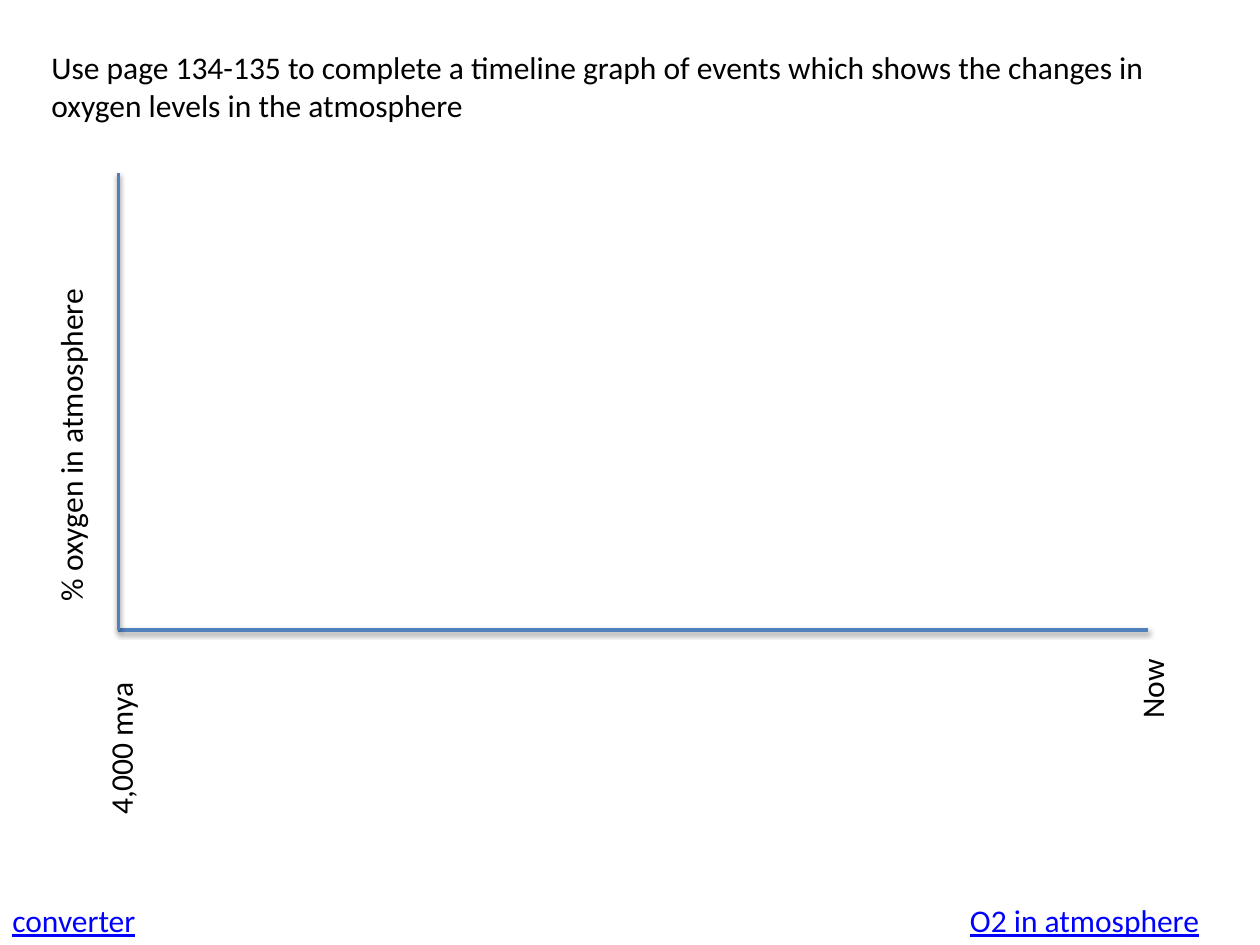
"""Build a blank oxygen timeline graph for pupils to complete."""
from lxml import etree
from pptx import Presentation
from pptx import util as u
from pptx.dml.color import RGBColor
from pptx.enum import shapes, text
from pptx.oxml import ns

BLACK = RGBColor(0x00, 0x00, 0x00)
BLUE = RGBColor(0x00, 0x00, 0xFF)
STEEL = RGBColor(0x4F, 0x81, 0xBD)


class Page:
    def __init__(self, slide, font="Calibri", size=18):
        self.slide = slide
        self.font = font
        self.size = size

    def label(self, words, left, top, width, height=0.4, *,
              color=BLACK, under=None, turn=0, wrap=False):
        box = self.slide.shapes.add_textbox(*map(u.Inches, (left, top, width, height)))
        box.rotation = turn
        frame = box.text_frame
        frame.word_wrap = wrap
        frame.auto_size = text.MSO_AUTO_SIZE.SHAPE_TO_FIT_TEXT
        run = frame.paragraphs[0].add_run()
        run.text = words
        run.font.name = self.font
        run.font.size = u.Pt(self.size)
        run.font.color.rgb = color
        run.font.underline = under

    def axis(self, start, end):
        line = self.slide.shapes.add_connector(
            shapes.MSO_CONNECTOR.STRAIGHT, *map(u.Inches, (*start, *end)))
        line.line.color.rgb = STEEL
        line.line.width = u.Pt(2)
        props = line._element.spPr
        effects = etree.SubElement(props, ns.qn("a:effectLst"))
        shade = etree.SubElement(
            effects, ns.qn("a:outerShdw"), blurRad=str(u.Pt(3.1)),
            dist=str(u.Pt(1.6)), dir="5400000", rotWithShape="0")
        color = etree.SubElement(shade, ns.qn("a:srgbClr"), val=str(BLACK))
        etree.SubElement(color, ns.qn("a:alpha"), val="38000")


def main():
    deck = Presentation()
    deck.slide_width, deck.slide_height = u.Inches(10), u.Inches(7.5)
    page = Page(deck.slides.add_slide(deck.slide_layouts[6]))

    zero = (0.94, 5)
    page.axis(zero, (9.11, 5))
    page.label("Now", 8.77, 5.23, 0.74, turn=270)
    page.label("4,000 mya", 0.2, 5.61, 1.51, turn=270)
    page.label("Use page 134-135 to complete a timeline graph of events which "
               "shows the changes in oxygen levels in the atmosphere",
               0.31, 0.33, 9.35, 0.71, wrap=True)
    page.label("converter", 0, 7.1, 5, color=BLUE, under=True, wrap=True)
    page.label("O2 in atmosphere", 7.6, 7.1, 2.4, color=BLUE, under=True)
    page.axis(zero, (0.94, 1.37))
    page.label("% oxygen in atmosphere", -1.04, 3.07, 3.2, turn=270)

    deck.save("out.pptx")


if __name__ == "__main__":
    main()
